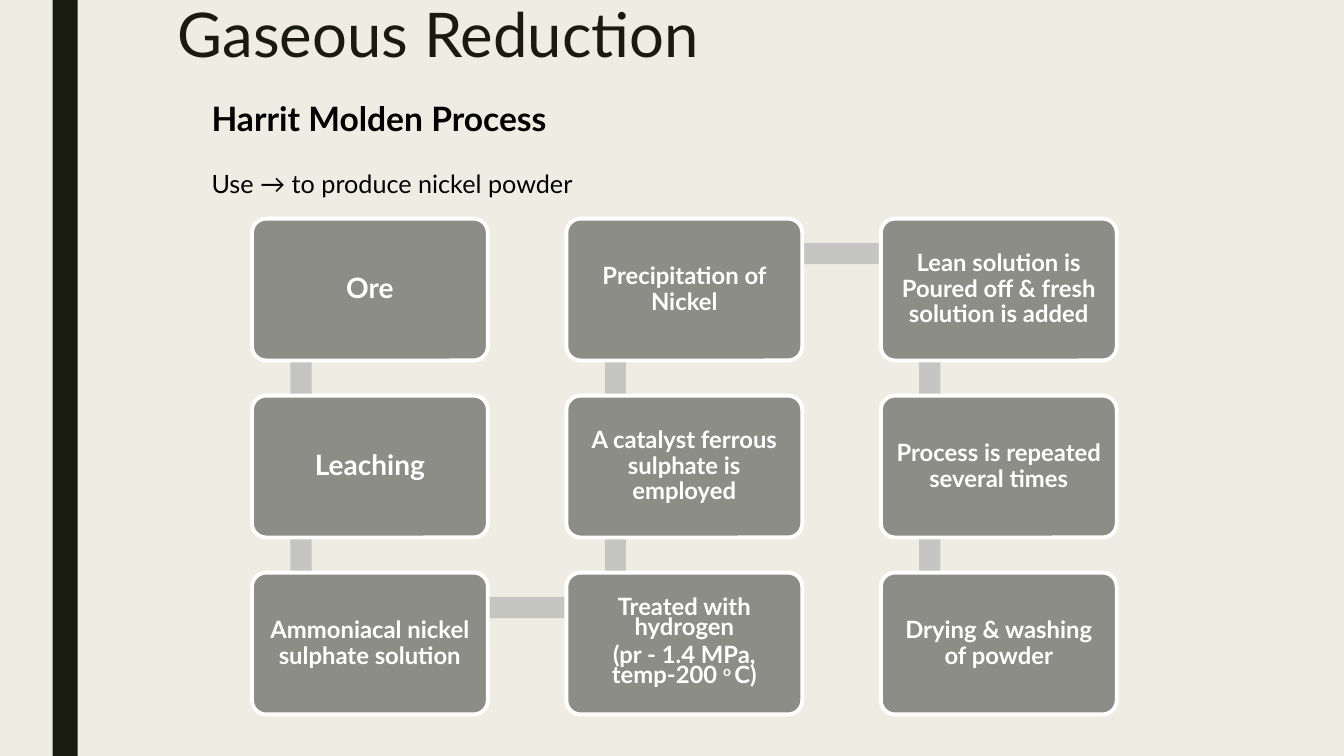
"""Build a slide with the nine-step flow of nickel powder production."""
import pptx
import pptx.dml.color
import pptx.enum.shapes
import pptx.enum.text
import pptx.util

Pt = pptx.util.Pt
SHAPES = pptx.enum.shapes.MSO_SHAPE
ALIGN = pptx.enum.text.PP_ALIGN
ANCHOR = pptx.enum.text.MSO_ANCHOR

FONT = "Lato"
BACKGROUND, DARK, BLACK, WHITE = "EFEDE3", "191B0E", "000000", "FFFFFF"
BOX_GREY, LINK_GREY = "8C8D86", "C5C5C3"

BOX_LEFT, BOX_TOP = 180, 156.2
BOX_WIDTH, BOX_HEIGHT = 168.5, 101.3
COLUMN_PITCH, ROW_PITCH = 224.6, 126.4
LINK_THICKNESS, LINK_X, LINK_Y = 15.2, 35, 25

STEPS = [
    (0, 0, 20, 0.9, ["Ore"]),
    (0, 1, 20, 0.9, ["Leaching"]),
    (0, 2, 17, 0.9, ["Ammoniacal nickel sulphate solution"]),
    (1, 2, 17, 0.7, ["Treated with hydrogen", "(pr - 1.4 MPa, temp-200 ^o ^C)"]),
    (1, 1, 17, 0.9, ["A catalyst ferrous sulphate is employed"]),
    (1, 0, 17, 0.9, ["Precipitation of Nickel"]),
    (2, 0, 17, 0.9, ["Lean solution is Poured off & fresh solution is added"]),
    (2, 1, 17, 0.9, ["Process is repeated several times"]),
    (2, 2, 17, 0.9, ["Drying & washing of powder"]),
]


def apply_format(target, values):
    """Set each named attribute of the target."""
    for name, value in values.items():
        setattr(target, name, value)


def paint(fill, colour):
    """Give a fill one solid colour."""
    fill.solid()
    fill.fore_color.rgb = pptx.dml.color.RGBColor.from_string(colour)


def write_paragraph(paragraph, text, colour, font_format, paragraph_format):
    """Write text in which parts between carets are superscript."""
    apply_format(paragraph, paragraph_format)
    for index, part in enumerate(text.split("^")):
        run = paragraph.add_run()
        run.text = part
        apply_format(run.font, {"name": FONT, **font_format})
        paint(run.font.fill, colour)
        if index % 2:
            run._r.get_or_add_rPr().set("baseline", "30000")


def add_block(slide, kind, left, top, width, height, colour):
    """Add a filled shape without outline or shadow."""
    shape = slide.shapes.add_shape(kind, Pt(left), Pt(top), Pt(width), Pt(height))
    shape.shadow.inherit = False
    paint(shape.fill, colour)
    shape.line.fill.background()
    return shape


def add_text(slide, left, top, width, height, lines):
    """Add a wrapping text box with one paragraph for each line."""
    box = slide.shapes.add_textbox(Pt(left), Pt(top), Pt(width), Pt(height))
    frame = box.text_frame
    frame.word_wrap = True
    for index, line in enumerate(lines):
        paragraph = frame.add_paragraph() if index else frame.paragraphs[0]
        write_paragraph(paragraph, *line)


def box_corner(column, row):
    """Return the left and top of a step in the grid."""
    return BOX_LEFT + column * COLUMN_PITCH, BOX_TOP + row * ROW_PITCH


def add_link(slide, start, end):
    """Add the bar that runs from one step to the next."""
    (start_x, start_y), (end_x, end_y) = box_corner(*start), box_corner(*end)
    width = max(abs(end_x - start_x), LINK_THICKNESS)
    height = max(abs(end_y - start_y), LINK_THICKNESS)
    left = (start_x + end_x - width) / 2 + LINK_X
    top = (start_y + end_y - height) / 2 + LINK_Y
    add_block(slide, SHAPES.RECTANGLE, left, top, width, height, LINK_GREY)


def add_step(slide, column, row, size, spacing, lines):
    """Add one rounded box with its centred text."""
    left, top = box_corner(column, row)
    shape = add_block(slide, SHAPES.ROUNDED_RECTANGLE, left, top,
                      BOX_WIDTH, BOX_HEIGHT, BOX_GREY)
    shape.adjustments[0] = 0.1
    paint(shape.line.fill, WHITE)
    shape.line.width = Pt(2.75)
    frame = shape.text_frame
    sides = ("left", "right", "top", "bottom")
    apply_format(frame, {f"margin_{side}": Pt(5) for side in sides})
    apply_format(frame, {"word_wrap": True, "vertical_anchor": ANCHOR.MIDDLE})
    for index, text in enumerate(lines):
        paragraph = frame.add_paragraph() if index else frame.paragraphs[0]
        write_paragraph(paragraph, text, WHITE, {"size": Pt(size), "bold": True},
                        {"alignment": ALIGN.CENTER, "line_spacing": spacing,
                         "space_after": Pt(6)})


def main():
    """Build and save the slide."""
    presentation = pptx.Presentation()
    apply_format(presentation, {"slide_width": Pt(960), "slide_height": Pt(540)})
    slide = presentation.slides.add_slide(presentation.slide_layouts[6])
    paint(slide.background.fill, BACKGROUND)
    add_block(slide, SHAPES.RECTANGLE, 37.5, 0, 18, 540, DARK)
    add_text(slide, 120, 0, 720, 126, [
        ("Gaseous Reduction", DARK, {"size": Pt(44)}, {"line_spacing": 0.89}),
    ])
    add_text(slide, 144, 66.2, 666, 101.5, [
        ("Harrit Molden Process", BLACK, {"size": Pt(24), "bold": True}, {}),
        ("Use → to produce nickel powder", BLACK, {"size": Pt(18)},
         {"space_before": Pt(21.6)}),
    ])
    for step, following in zip(STEPS, STEPS[1:]):
        add_link(slide, step[:2], following[:2])
    for step in STEPS:
        add_step(slide, *step)
    presentation.save("out.pptx")


if __name__ == "__main__":
    main()
